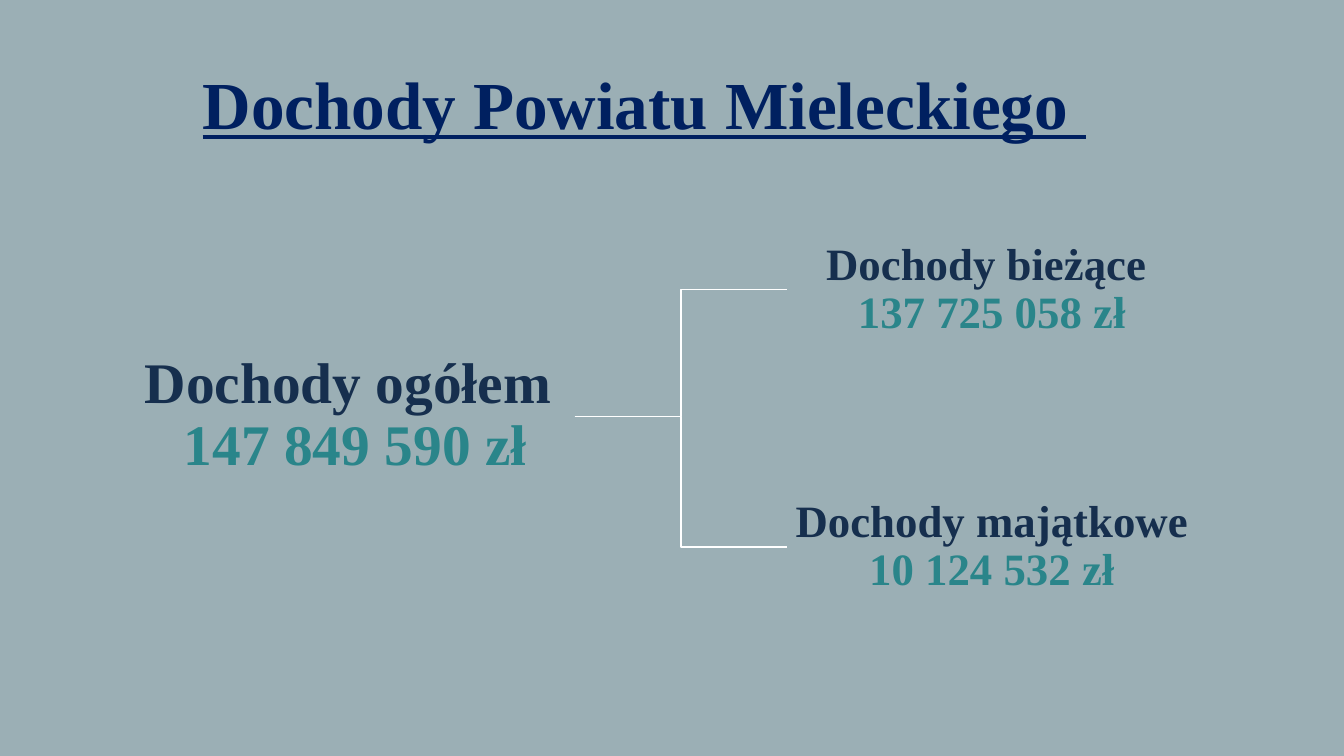
from dataclasses import dataclass

from lxml.etree import SubElement
from pptx import Presentation
from pptx.dml.color import RGBColor
from pptx.enum.shapes import MSO_CONNECTOR, MSO_SHAPE
from pptx.enum.text import MSO_ANCHOR, PP_ALIGN
from pptx.oxml.ns import qn
from pptx.util import Inches, Pt

PAGE_WIDTH, PAGE_HEIGHT = Inches(13.33), Inches(7.5)
RIGHT, LEFT = 3, 1


@dataclass(frozen=True)
class Theme:
    font: str = "Times New Roman"
    background: RGBColor = RGBColor(0x9B, 0xAF, 0xB5)
    title: RGBColor = RGBColor(0x00, 0x20, 0x60)
    label: RGBColor = RGBColor(0x16, 0x2F, 0x4E)
    amount: RGBColor = RGBColor(0x2A, 0x85, 0x8A)
    branch: RGBColor = RGBColor(0xFF, 0xFF, 0xFF)
    title_size: int = 48
    total_size: int = 41
    part_size: int = 32


THEME = Theme()


def area(left, top, width, height):
    """Turn percentages of the page into a position and size."""
    return (
        int(PAGE_WIDTH * left / 100),
        int(PAGE_HEIGHT * top / 100),
        int(PAGE_WIDTH * width / 100),
        int(PAGE_HEIGHT * height / 100),
    )


def add_span(para, text, size, color, underline=False):
    span = para.add_run()
    span.text = text
    font = span.font
    font.name, font.size, font.bold = THEME.font, Pt(size), True
    font.color.rgb = color
    if underline:
        font.underline = True


def centred_paragraph(frame):
    frame.word_wrap = True
    para = frame.paragraphs[0]
    para.alignment = PP_ALIGN.CENTER
    para.line_spacing = 0.9
    return para


def add_title(page, text):
    box = page.shapes.add_textbox(*area(4.13, 8.8, 87.6, 14.13))
    para = centred_paragraph(box.text_frame)
    para.space_before = Pt(10)
    add_span(para, text, THEME.title_size, THEME.title, underline=True)


def add_income(page, place, label, amount, size):
    """Add a box with a label above its amount."""
    box = page.shapes.add_shape(MSO_SHAPE.RECTANGLE, *place)
    box.shadow.inherit = False
    box.fill.solid()
    box.fill.fore_color.rgb = THEME.background
    box.line.fill.background()
    frame = box.text_frame
    frame.vertical_anchor = MSO_ANCHOR.MIDDLE
    frame.margin_left = frame.margin_right = Inches(0.02)
    frame.margin_top = frame.margin_bottom = Inches(0.02)
    para = centred_paragraph(frame)
    add_span(para, label, size, THEME.label)
    para.add_line_break()
    add_span(para, amount, size, THEME.amount)
    return box


def add_branch(page, total, part):
    branch = page.shapes.add_connector(MSO_CONNECTOR.ELBOW, 0, 0, 0, 0)
    branch.begin_connect(total, RIGHT)
    branch.end_connect(part, LEFT)
    branch.line.color.rgb = THEME.branch
    branch.line.width = Pt(1)
    SubElement(branch._element.spPr, qn("a:effectLst"))


def main():
    deck = Presentation()
    deck.slide_width, deck.slide_height = PAGE_WIDTH, PAGE_HEIGHT
    page = deck.slides.add_slide(deck.slide_layouts[6])
    page.background.fill.solid()
    page.background.fill.fore_color.rgb = THEME.background

    add_title(page, "Dochody Powiatu Mieleckiego ")
    total = add_income(page, area(10.13, 44.6, 32.63, 20.93),
                       "Dochody ogółem ", "147 849 590 zł", THEME.total_size)
    parts = (
        (30.8, "Dochody bieżące ", "137 725 058 zł"),
        (64.8, "Dochody majątkowe", "10 124 532 zł"),
    )
    for top, label, amount in parts:
        part = add_income(page, area(58.59, top, 30.42, 15.07),
                          label, amount, THEME.part_size)
        add_branch(page, total, part)

    deck.save("out.pptx")


if __name__ == "__main__":
    main()
